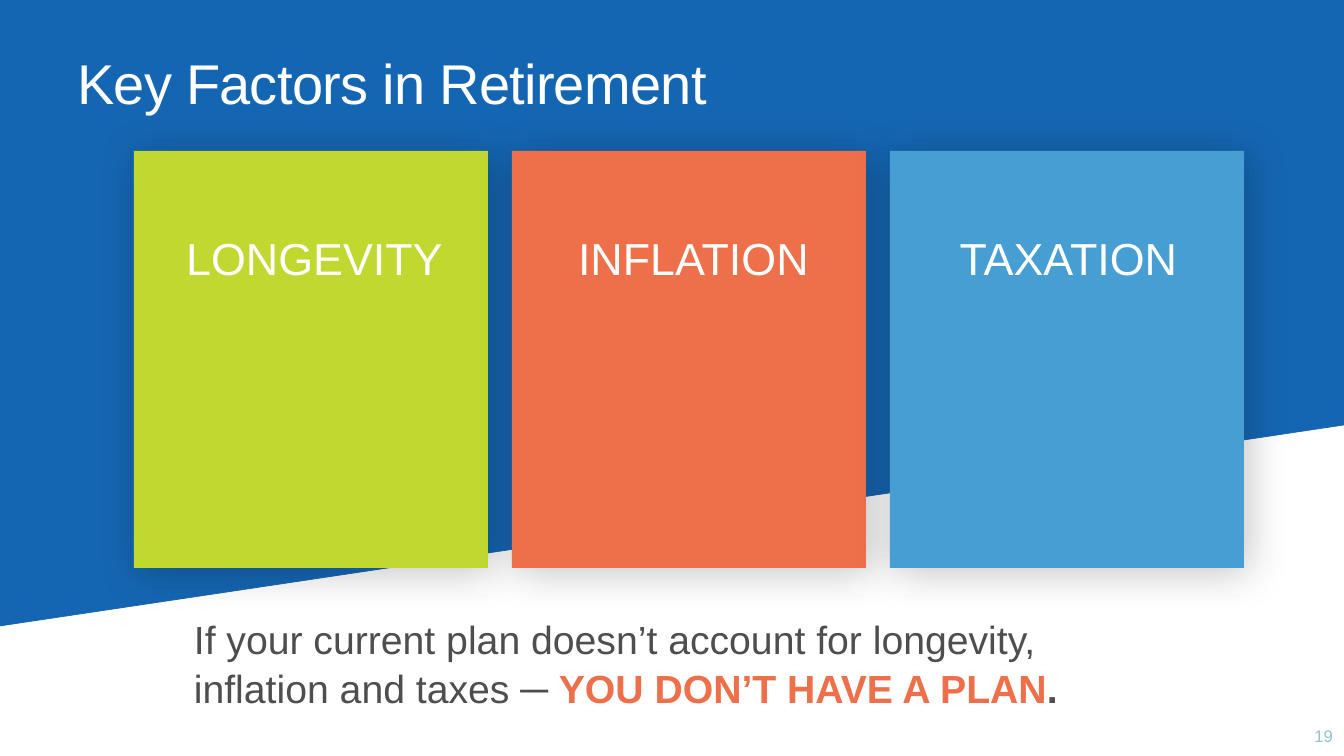
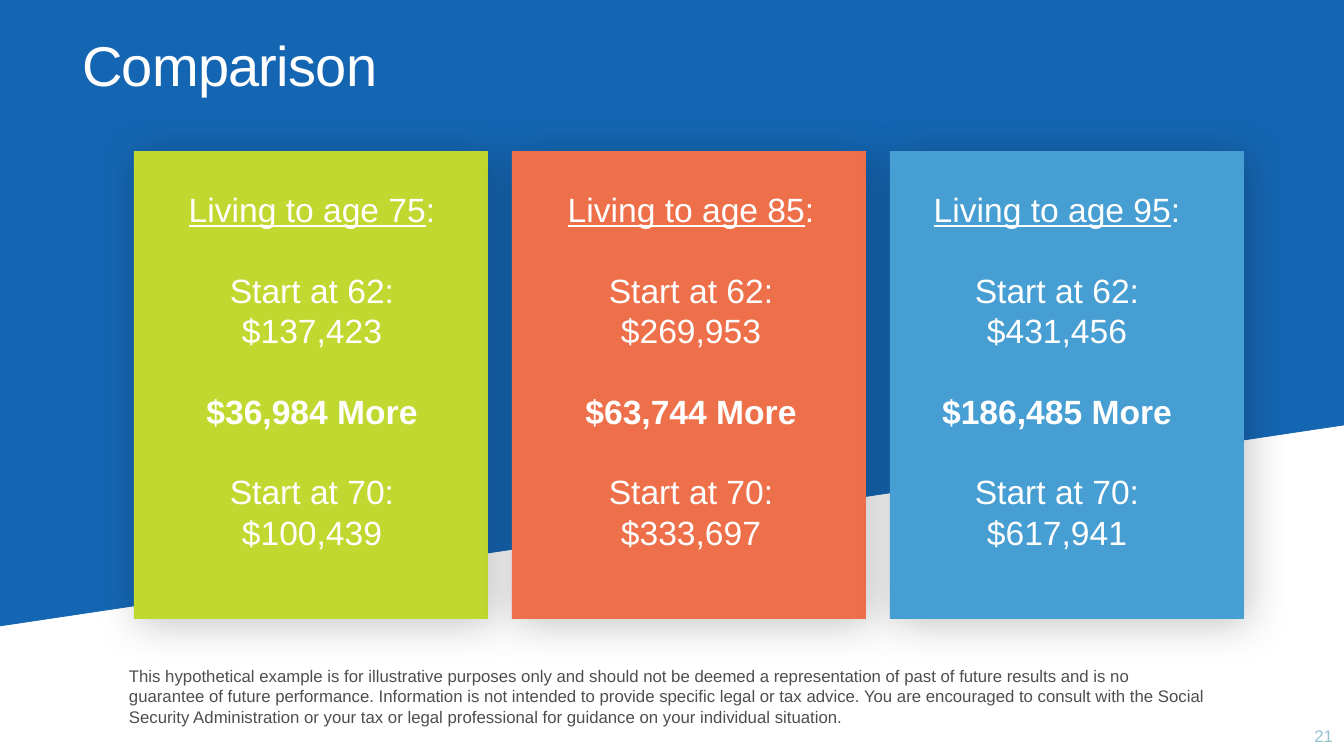
from dataclasses import dataclass

from lxml.etree import SubElement
from pptx import Presentation
from pptx.dml.color import RGBColor
from pptx.enum.shapes import MSO_SHAPE as Shape
from pptx.enum.text import MSO_ANCHOR as Anchor, MSO_AUTO_SIZE as AutoSize, PP_ALIGN as Align
from pptx.oxml.ns import qn
from pptx.util import Emu, Pt

# Content: box tuples are left, top, width, height in px
FACTORS = {
    "title": "Key Factors in Retirement",
    "title_box": (67, 51, 1206, 69),
    "number": "19",
    "card_height": 417,
    "labels": [("LONGEVITY", 167), ("INFLATION", 546), ("TAXATION", 921)],
}
STATEMENT = [
    ("If your current plan doesn’t account for longevity, inflation and taxes ─ ", {}),
    ("YOU DON’T HAVE A PLAN", {"color": "EE704A", "bold": True}),
    (".", {"bold": True}),
]
COMPARISON = {
    "title": "Comparison",
    "title_box": (72, 33, 1202, 69),
    "number": "21",
    "card_height": 468,
    # age, amount from 62, difference, amount from 70, text left
    "cases": [
        (75, "$137,423", "$36,984", "$100,439", 163),
        (85, "$269,953", "$63,744", "$333,697", 542),
        (95, "$431,456", "$186,485", "$617,941", 908),
    ],
}
DISCLAIMER = (
    "This hypothetical example is for illustrative purposes only and should not be deemed "
    "a representation of past of future results and is no guarantee of future performance. "
    "Information is not intended to provide specific legal or tax advice. You are encouraged "
    "to consult with the Social Security Administration or your tax or legal professional "
    "for guidance on your individual situation."
)


@dataclass(frozen=True)
class Theme:
    font: str = "Arial"
    blue: str = "1566B2"
    white: str = "FFFFFF"
    ink: str = "4E4E50"
    number: str = "92C2CD"
    cards: tuple = ("C0D82F", "EE704A", "469ED2")
    title_size: int = 40
    label_size: int = 32
    statement_size: int = 28
    case_size: int = 24
    small_size: int = 12


THEME = Theme()
PX = 914400 / 100.8
WIDTH, HEIGHT = 1344, 756
BAND = [(0, 0), (WIDTH, 0), (WIDTH, 425), (0, 626)]
CARD_LEFT, CARD_TOP, CARD_WIDTH, CARD_GAP = 134, 151, 354, 24


def px(length):
    return Emu(round(length * PX))


def place(box):
    return [px(length) for length in box]


def rgb(color):
    return RGBColor.from_string(color)


def write(frame, paragraphs, size, color, align=Align.LEFT, leading=None,
          gaps=(), after=0, tracking=None, anchor=Anchor.TOP):
    """Fill a frame; each paragraph is a list of (text, overrides) spans."""
    frame.word_wrap = True
    frame.auto_size = AutoSize.NONE
    frame.vertical_anchor = anchor
    for index, spans in enumerate(paragraphs):
        para = frame.add_paragraph() if index else frame.paragraphs[0]
        para.alignment = align
        para.line_spacing = leading
        para.space_before = Pt(gaps[index] if gaps else 0)
        para.space_after = Pt(after)
        for text, change in spans:
            span = para.add_run()
            span.text = text
            font = span.font
            font.name, font.size = THEME.font, Pt(size)
            font.color.rgb = rgb(change.get("color", color))
            font.bold = change.get("bold", False)
            font.underline = change.get("underline", False)
            if tracking is not None:
                font._element.set("spc", str(round(tracking * 100)))


def add_text(page, box, paragraphs, **style):
    write(page.shapes.add_textbox(*place(box)).text_frame, paragraphs, **style)


def add_band(page):
    """Draw the slanted band and keep it in the layout for every page."""
    builder = page.shapes.build_freeform(*BAND[0], scale=PX)
    builder.add_line_segments(BAND[1:], close=True)
    band = builder.convert_to_shape()
    band.shadow.inherit = False
    band.fill.solid()
    band.fill.fore_color.rgb = rgb(THEME.blue)
    band.line.color.rgb = rgb(THEME.blue)
    band.line.width = Pt(0.5)
    band.element.nvSpPr.cNvPr.set("id", "100")
    page.slide_layout.shapes.element.insert(2, band.element)


def add_page(deck, content):
    """Start a page with its title and page number."""
    page = deck.slides.add_slide(deck.slide_layouts[5])
    title = page.shapes.title
    title.left, title.top, title.width, title.height = place(content["title_box"])
    write(title.text_frame, [[(content["title"], {})]], size=THEME.title_size,
          color=THEME.white, leading=0.9, tracking=-0.5)
    add_text(page, (1041, 716, 302, 40), [[(content["number"], {})]],
             size=THEME.small_size, color=THEME.number, align=Align.RIGHT,
             anchor=Anchor.MIDDLE)
    return page


def add_cards(page, height):
    for index, color in enumerate(THEME.cards):
        left = CARD_LEFT + index * (CARD_WIDTH + CARD_GAP)
        card = page.shapes.add_shape(
            Shape.RECTANGLE, *place((left, CARD_TOP, CARD_WIDTH, height)))
        card.fill.solid()
        card.fill.fore_color.rgb = rgb(color)
        card.line.fill.background()
        # Soft shadow, down and to the right
        card.shadow.inherit = False
        effects = card.element.spPr.find(qn("a:effectLst"))
        shadow = SubElement(effects, qn("a:outerShdw"), blurRad=str(Pt(30.5)),
                            dist=str(Pt(4)), dir=str(45 * 60000), algn="tl",
                            rotWithShape="0")
        tint = SubElement(shadow, qn("a:srgbClr"), val="000000")
        SubElement(tint, qn("a:alpha"), val="23000")


def build_factors(deck):
    page = add_page(deck, FACTORS)
    add_band(page)
    add_text(page, (184, 608, 975, 119), [STATEMENT], size=THEME.statement_size,
             color=THEME.ink, leading=Pt(35), after=6)
    add_cards(page, FACTORS["card_height"])
    for label, left in FACTORS["labels"]:
        add_text(page, (left, 221, 295, 79), [[(label, {})]], size=THEME.label_size,
                 color=THEME.white, align=Align.CENTER, leading=Pt(42))


def build_comparison(deck):
    page = add_page(deck, COMPARISON)
    add_text(page, (119, 661, 1101, 72), [[(DISCLAIMER, {})]], size=THEME.small_size,
             color=THEME.ink, leading=Pt(THEME.small_size * 1.2))
    add_cards(page, COMPARISON["card_height"])
    line = THEME.case_size * 1.2
    for age, early, difference, late, left in COMPARISON["cases"]:
        paragraphs = [
            [(f"Living to age {age}", {"underline": True}), (":", {})],
            [("Start at 62:", {})],
            [(early, {})],
            [(f"{difference} More", {"bold": True})],
            [("Start at 70:", {})],
            [(late, {})],
        ]
        add_text(page, (left, 184, 298, 377), paragraphs, size=THEME.case_size,
                 color=THEME.white, align=Align.CENTER, leading=Pt(line),
                 gaps=(0, line, 0, line, line, 0))


def main():
    deck = Presentation()
    deck.slide_width, deck.slide_height = px(WIDTH), px(HEIGHT)
    build_factors(deck)
    build_comparison(deck)
    deck.save("out.pptx")


if __name__ == "__main__":
    main()
